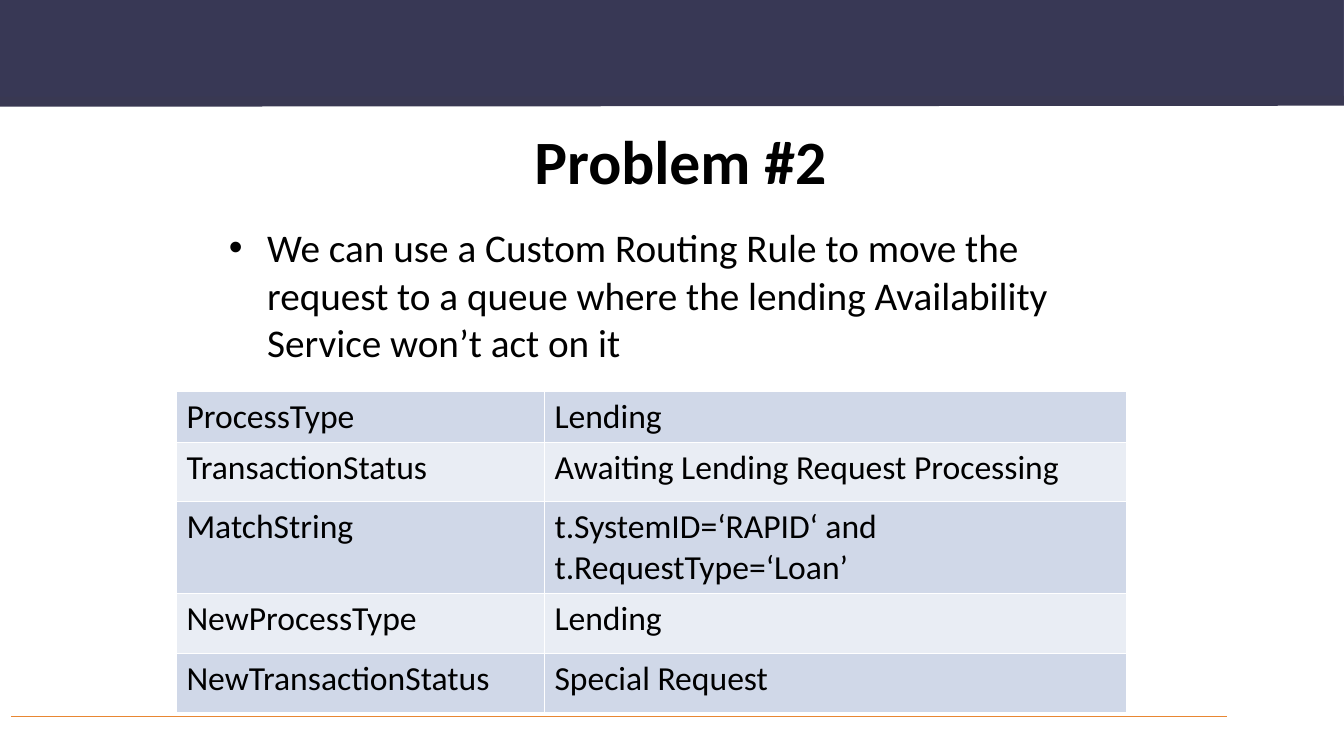
from lxml import etree
from pptx import Presentation
from pptx.dml.color import RGBColor
from pptx.enum.shapes import MSO_CONNECTOR, MSO_SHAPE
from pptx.enum.text import MSO_ANCHOR, MSO_AUTO_SIZE, PP_ALIGN
from pptx.oxml import parse_xml
from pptx.oxml.ns import nsdecls, qn
from pptx.util import Inches, Pt


def color(value):
    return RGBColor.from_string(value)


def add_rule(start, end, value, width):
    rule = page.shapes.add_connector(
        MSO_CONNECTOR.STRAIGHT, *[Inches(number) for number in start + end])
    rule.line.color.rgb = color(value)
    rule.line.width = Pt(width)
    etree.SubElement(rule._element.spPr, qn("a:effectLst"))


deck = Presentation()
deck.slide_width, deck.slide_height = Inches(13.33), Inches(7.5)
page = deck.slides.add_slide(deck.slide_layouts[1])

# Header band and rules
add_rule((0.11, 7.11), (12.17, 7.11), "E88733", 0.75)
band = page.shapes.add_shape(MSO_SHAPE.RECTANGLE, 0, 0, deck.slide_width, Inches(1))
band.shadow.inherit = False
band.fill.solid()
band.fill.fore_color.rgb = color("383855")
band.line.color.rgb = color("41405E")
band.line.width = Pt(0.75)
add_rule((0, 1.01), (13.33, 1), "393852", 7)

# Title and body text
title, body = page.placeholders
texts = [
    (title, (1.75, 1.17, 10, 1.15), "Problem #2", 44),
    (body, (2.17, 2.17, 9, 4.87),
     "We can use a Custom Routing Rule to move the request to a queue "
     "where the lending Availability Service won’t act on it", 28),
]
for box, place, text, size in texts:
    box.left, box.top, box.width, box.height = [Inches(number) for number in place]
    frame = box.text_frame
    frame.text = text
    frame.word_wrap = True
    frame.auto_size = MSO_AUTO_SIZE.NONE
    frame.vertical_anchor = MSO_ANCHOR.TOP
    para = frame.paragraphs[0]
    para.space_before = Pt(0)
    if box is body:
        properties = para._p.get_or_add_pPr()
        properties.set("marL", str(Inches(0.38)))
        properties.set("indent", str(-Inches(0.38)))
        properties.append(parse_xml(f'<a:buFont {nsdecls("a")} typeface="Arial"/>'))
        properties.append(parse_xml(f'<a:buChar {nsdecls("a")} char="•"/>'))
    else:
        para.alignment = PP_ALIGN.CENTER
    para.font.name = "Calibri"
    para.font.size = Pt(size)
    para.font.bold = box is title
    para.font.color.rgb = color("000000")

# Routing rule table
rule_fields = [
    ("ProcessType", "Lending", 0.5),
    ("TransactionStatus", "Awaiting Lending Request Processing", 0.59),
    ("MatchString", "t.SystemID=‘RAPID‘ and t.RequestType=‘Loan’", 0.9),
    ("NewProcessType", "Lending", 0.59),
    ("NewTransactionStatus", "Special Request", 0.59),
]
table = page.shapes.add_table(
    len(rule_fields), 2, Inches(1.75), Inches(3.88), Inches(9.42), Inches(3.17)).table
table.first_row = False
table.columns[0].width = Inches(3.65)
table.columns[1].width = Inches(5.77)
for row, (field, value, height) in enumerate(rule_fields):
    table.rows[row].height = Inches(height)
    for column, text in enumerate((field, value)):
        cell = table.cell(row, column)
        cell.text = text
        cell.margin_left = cell.margin_right = Inches(0.1)
        cell.margin_top = cell.margin_bottom = Inches(0.05)
        font = cell.text_frame.paragraphs[0].font
        font.name = "Calibri"
        font.size = Pt(24)
        font.color.rgb = color("000000")
        # Borders come before the fill in the cell properties
        for side in ("lnL", "lnR", "lnT", "lnB"):
            cell._tc.get_or_add_tcPr().append(parse_xml(
                f'<a:{side} {nsdecls("a")} w="{Pt(1)}"><a:solidFill>'
                f'<a:srgbClr val="FFFFFF"/></a:solidFill></a:{side}>'))
        cell.fill.solid()
        cell.fill.fore_color.rgb = color(("D0D8E8", "E9EDF4")[row % 2])

deck.save("out.pptx")
